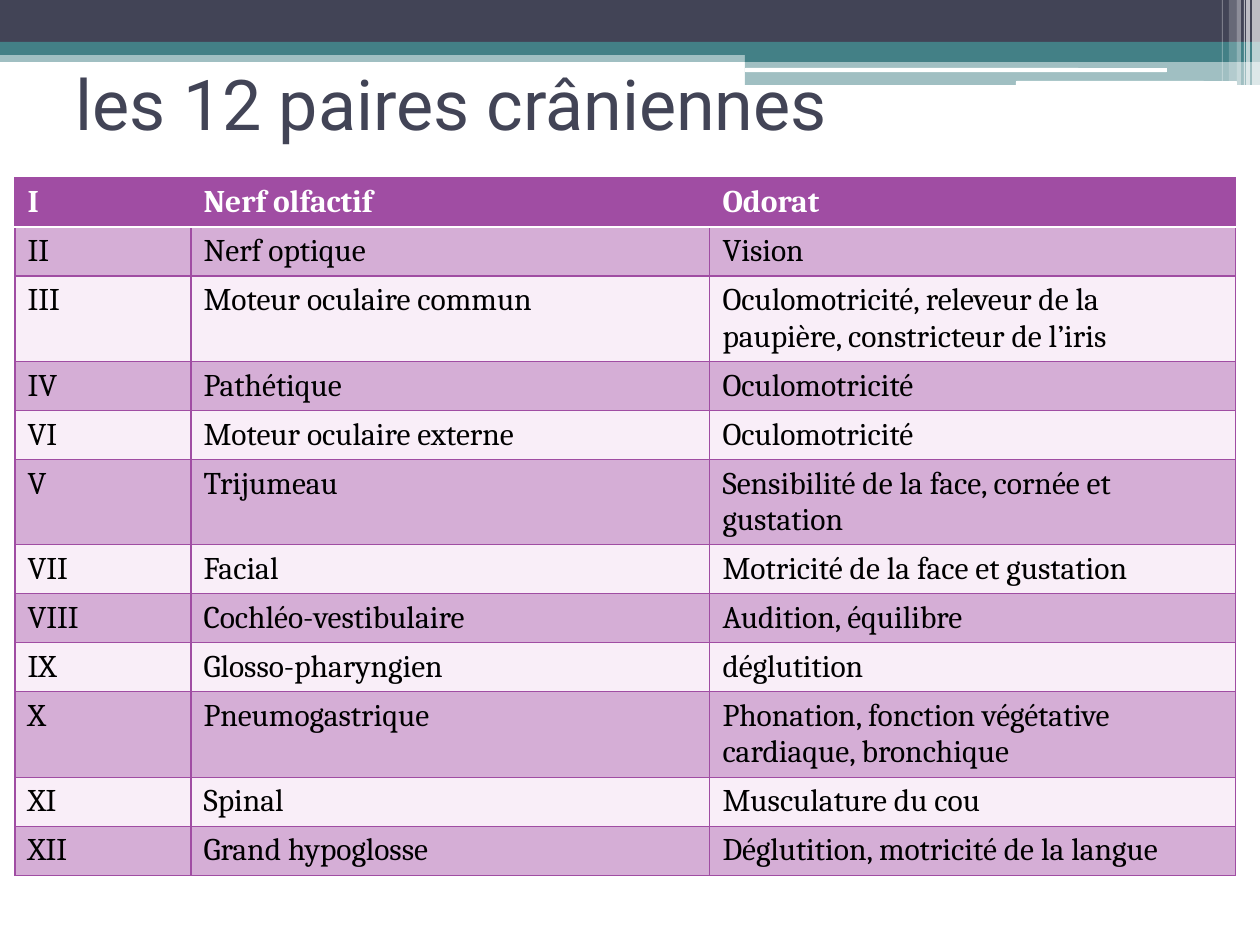
from lxml.etree import SubElement
from pptx import Presentation
from pptx.dml.color import RGBColor as RGB
from pptx.enum.shapes import MSO_SHAPE as SHAPE
from pptx.enum.text import MSO_ANCHOR as ANCHOR, PP_ALIGN as ALIGN
from pptx.oxml.ns import qn
from pptx.util import Pt

PX = 914400 / 126
THEME = {
    "slate": "424456", "teal": "438086", "white": "FFFFFF", "black": "000000",
    "purple": "A04DA3", "band": "D5AED6", "pale": "F9EEF8",
    "title": {"name": "Roboto", "size": Pt(40), "bold": False, "color": "slate"},
    "header": {"name": "Cambria", "size": Pt(18), "bold": True, "color": "white"},
    "body": {"name": "Cambria", "size": Pt(18), "bold": False, "color": "black"},
}


def px(*values):
    return [round(value * PX) for value in values]


def format_font(font, style):
    for name, value in THEME[style].items():
        if name == "color":
            font.color.rgb = RGB.from_string(THEME[value])
        else:
            setattr(font, name, value)


presentation = Presentation()
presentation.slide_width, presentation.slide_height = px(1260, 945)
slide = presentation.slides.add_slide(presentation.slide_layouts[5])

BANDS = [
    (SHAPE.RECTANGLE, 0, 50, 1260, 12, "teal", 50),
    (SHAPE.RECTANGLE, 0, 0, 1260, 42, "slate", 100),
    (SHAPE.RECTANGLE, 0, 42, 1260, 13, "teal", 100),
    (SHAPE.RECTANGLE, 745, 49, 515, 13, "teal", 100),
    (SHAPE.RECTANGLE, 745, 61, 515, 24, "teal", 50),
    (SHAPE.ROUNDED_RECTANGLE, 745, 68, 422, 4, "white", 100),
    (SHAPE.ROUNDED_RECTANGLE, 1016, 81, 221, 5, "white", 100),
]
STRIPES = [
    (1252, 8, 85, 65), (1246, 4, 85, 65), (1244, 1, 85, 60),
    (1237, 4, 85, 40), (1229, 8, 81, 20), (1222, 1, 81, 30),
]
BANDS += [(SHAPE.RECTANGLE, left, 0, width, height, "white", opacity)
          for left, width, height, opacity in STRIPES]
for kind, left, top, width, height, color, opacity in BANDS:
    shape = slide.shapes.add_shape(kind, *px(left, top, width, height))
    shape.shadow.inherit = False
    shape.line.fill.background()
    shape.fill.solid()
    shape.fill.fore_color.rgb = RGB.from_string(THEME[color])
    if opacity < 100:
        rgb = shape.fill._xPr.find(".//" + qn("a:srgbClr"))
        SubElement(rgb, qn("a:alpha"), val=str(opacity * 1000))

title = slide.shapes.title
slide.shapes._spTree.append(title._element)
title.left, title.top, title.width, title.height = px(63, 29, 1134, 147)
title.text_frame.text = "les 12 paires crâniennes"
title.text_frame.vertical_anchor = ANCHOR.MIDDLE
paragraph = title.text_frame.paragraphs[0]
paragraph.alignment = ALIGN.LEFT
format_font(paragraph.runs[0].font, "title")

NERVES = [
    ("I", "Nerf olfactif", "Odorat"),
    ("II", "Nerf optique", "Vision"),
    ("III", "Moteur oculaire commun",
     "Oculomotricité, releveur de la paupière, constricteur de l’iris"),
    ("IV", "Pathétique", "Oculomotricité"),
    ("VI", "Moteur oculaire externe", "Oculomotricité"),
    ("V", "Trijumeau", "Sensibilité de la face, cornée et gustation"),
    ("VII", "Facial", "Motricité de la face et gustation"),
    ("VIII", "Cochléo-vestibulaire", "Audition, équilibre"),
    ("IX", "Glosso-pharyngien", "déglutition"),
    ("X", "Pneumogastrique", "Phonation, fonction végétative cardiaque, bronchique"),
    ("XI", "Spinal", "Musculature du cou"),
    ("XII", "Grand hypoglosse", "Déglutition, motricité de la langue"),
]
COLUMNS = px(176, 519, 526)
ROWS = px(*[85 if len(role) > 40 else 49 for _, _, role in NERVES])
table = slide.shapes.add_table(
    len(ROWS), len(COLUMNS), *px(15, 178), sum(COLUMNS), sum(ROWS)).table
table.first_row = table.horz_banding = False
for column, width in zip(table.columns, COLUMNS):
    column.width = width
for row, height in zip(table.rows, ROWS):
    row.height = height

for row_index, nerve in enumerate(NERVES):
    fill = "purple" if row_index == 0 else "band" if row_index % 2 else "pale"
    for column_index, text in enumerate(nerve):
        cell = table.cell(row_index, column_index)
        cell.text = text
        format_font(cell.text_frame.paragraphs[0].runs[0].font,
                    "body" if row_index else "header")
        properties = cell._tc.get_or_add_tcPr()
        for side in ("lnL", "lnR", "lnT", "lnB"):
            under_header = (row_index, side) in ((0, "lnB"), (1, "lnT"))
            color, width = ("white", 1.5) if under_header else ("purple", 0.75)
            border = SubElement(properties, qn("a:" + side), w=str(Pt(width)))
            solid = SubElement(border, qn("a:solidFill"))
            SubElement(solid, qn("a:srgbClr"), val=THEME[color])
        cell.fill.solid()
        cell.fill.fore_color.rgb = RGB.from_string(THEME[fill])

presentation.save("out.pptx")
